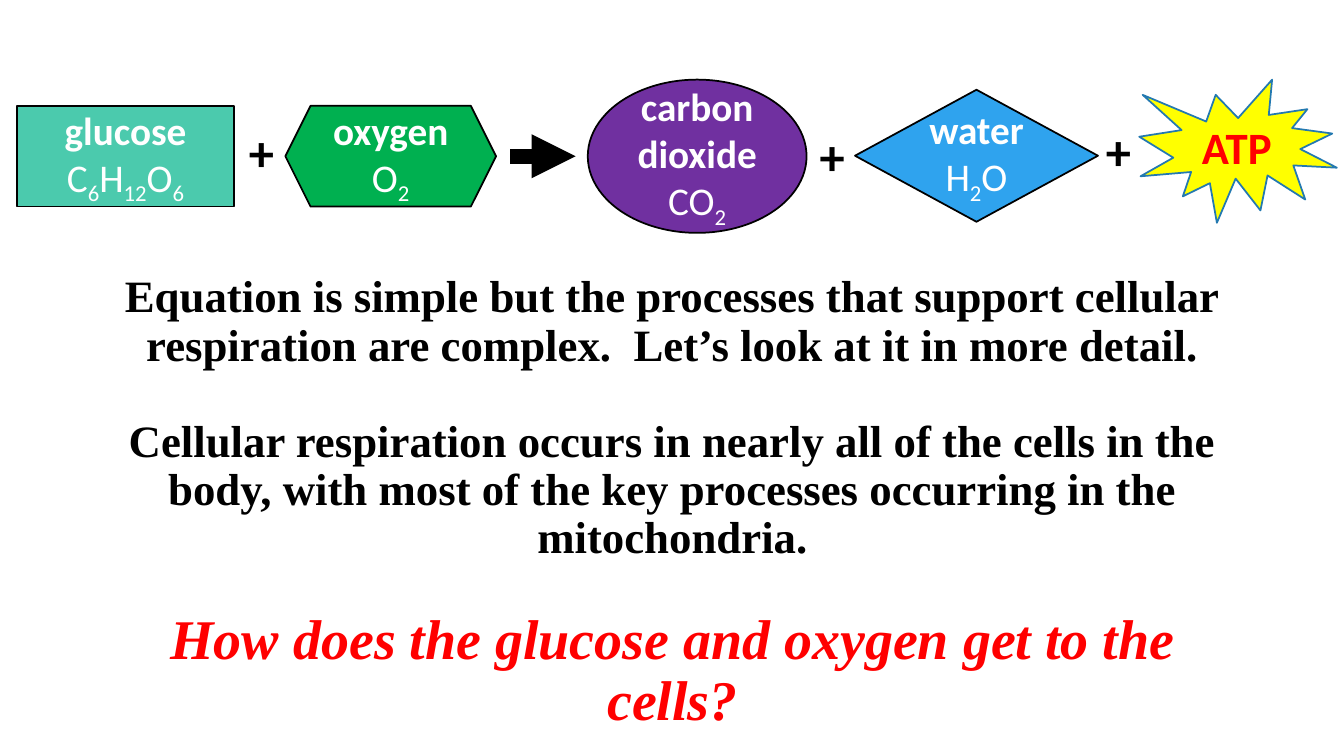
from dataclasses import dataclass
from itertools import groupby

from lxml.etree import SubElement
from pptx import Presentation
from pptx.dml.color import RGBColor
from pptx.enum.shapes import MSO_CONNECTOR, MSO_SHAPE
from pptx.enum.text import MSO_ANCHOR, MSO_AUTO_SIZE, PP_ALIGN
from pptx.oxml.ns import qn
from pptx.util import Emu, Pt

COLORS = {
    "black": "000000", "white": "FFFFFF", "red": "FF0000", "yellow": "FFFF00",
    "teal": "4BCAAD", "purple": "7030A0", "blue": "2FA3EE", "green": "00B050",
    "outline": "2379B0",
}
EMU_PER_PX = 9144  # 100 px to the inch


@dataclass
class Molecule:
    name: str
    formula: str
    preset: MSO_SHAPE
    left: int
    top: int
    width: int
    height: int
    fill: str
    line: str = "black"
    text_color: str = "white"
    size: int = 28


@dataclass
class Statement:
    text: str
    size: int = 32
    color: str = "black"
    italic: bool = False
    space_before: int = 0


MOLECULES = [
    Molecule("glucose", "C6H12O6", MSO_SHAPE.RECTANGLE, 17, 105, 215, 100, "teal"),
    Molecule("oxygen", "O2", MSO_SHAPE.HEXAGON, 283, 105, 209, 100, "green"),
    Molecule("carbon dioxide", "CO2", MSO_SHAPE.OVAL, 583, 79, 217, 152, "purple"),
    Molecule("water", "H2O", MSO_SHAPE.DIAMOND, 848, 89, 241, 131, "blue"),
    Molecule("ATP", "", MSO_SHAPE.EXPLOSION1, 1130, 79, 196, 142, "yellow",
             "outline", "red", 32),
]
PLUS_POSITIONS = [(237, 115), (803, 119), (1087, 114)]
STATEMENTS = [
    Statement("Equation is simple but the processes that support cellular "
              "respiration are complex.  Let’s look at it in more detail."),
    Statement("Cellular respiration occurs in nearly all of the cells in the body, "
              "with most of the key processes occurring in the mitochondria.",
              space_before=34),
    Statement("How does the glucose and oxygen get to the cells?",
              40, "red", True, 34),
]


def px(value: int) -> Emu:
    return Emu(value * EMU_PER_PX)


def rgb(name: str) -> RGBColor:
    return RGBColor.from_string(COLORS[name])


def style_font(font, size: int, color: str, bold: bool = True,
               name: str = "Calibri") -> None:
    font.name = name
    font.size = Pt(size)
    font.bold = bold
    font.color.rgb = rgb(color)


def add_molecule(slide, molecule: Molecule) -> None:
    shape = slide.shapes.add_shape(
        molecule.preset, px(molecule.left), px(molecule.top),
        px(molecule.width), px(molecule.height))
    shape.shadow.inherit = False
    shape.fill.solid()
    shape.fill.fore_color.rgb = rgb(molecule.fill)
    shape.line.color.rgb = rgb(molecule.line)
    shape.line.width = Pt(1.25)

    text_frame = shape.text_frame
    text_frame.word_wrap = True
    text_frame.vertical_anchor = MSO_ANCHOR.MIDDLE
    text_frame.text = molecule.name
    paragraph = text_frame.paragraphs[0]
    paragraph.alignment = PP_ALIGN.CENTER
    style_font(paragraph.runs[0].font, molecule.size, molecule.text_color)

    if molecule.formula:
        paragraph = text_frame.add_paragraph()
        paragraph.alignment = PP_ALIGN.CENTER
        for is_count, characters in groupby(molecule.formula, str.isdigit):
            run = paragraph.add_run()
            run.text = "".join(characters)
            style_font(run.font, molecule.size, molecule.text_color, bold=False)
            if is_count:
                run._r.get_or_add_rPr().set("baseline", "-25000")


def add_plus(slide, left: int, top: int) -> None:
    shape = slide.shapes.add_textbox(px(left), px(top), px(45), px(71))
    text_frame = shape.text_frame
    text_frame.word_wrap = False
    text_frame.auto_size = MSO_AUTO_SIZE.SHAPE_TO_FIT_TEXT
    text_frame.text = "+"
    style_font(text_frame.paragraphs[0].runs[0].font, 36, "black")


def add_reaction_arrow(slide) -> None:
    connector = slide.shapes.add_connector(
        MSO_CONNECTOR.STRAIGHT, px(506), px(155), px(571), px(155))
    connector.line.color.rgb = rgb("black")
    connector.line.width = Pt(10.5)
    SubElement(connector.line._get_or_add_ln(), qn("a:tailEnd"), type="triangle")
    SubElement(connector._element.spPr, qn("a:effectLst"))


def add_statements(slide, statements: list[Statement]) -> None:
    shape = slide.shapes.add_textbox(px(92), px(255), px(1150), px(488))
    text_frame = shape.text_frame
    text_frame.word_wrap = True
    text_frame.vertical_anchor = MSO_ANCHOR.MIDDLE
    text_frame.text = "\n".join(statement.text for statement in statements)
    for paragraph, statement in zip(text_frame.paragraphs, statements):
        paragraph.alignment = PP_ALIGN.CENTER
        paragraph.line_spacing = 0.9
        if statement.space_before:
            paragraph.space_before = Pt(statement.space_before)
        font = paragraph.runs[0].font
        style_font(font, statement.size, statement.color, name="Times New Roman")
        font.italic = statement.italic


def main() -> None:
    presentation = Presentation()
    presentation.slide_width = px(1333)
    presentation.slide_height = px(750)
    slide = presentation.slides.add_slide(presentation.slide_layouts[6])
    slide.background.fill.solid()
    slide.background.fill.fore_color.rgb = rgb("white")

    # Explanation below the equation
    add_statements(slide, STATEMENTS)

    # Respiration equation
    for molecule in MOLECULES:
        add_molecule(slide, molecule)
    for left, top in PLUS_POSITIONS:
        add_plus(slide, left, top)
    add_reaction_arrow(slide)

    presentation.save("out.pptx")


if __name__ == "__main__":
    main()
